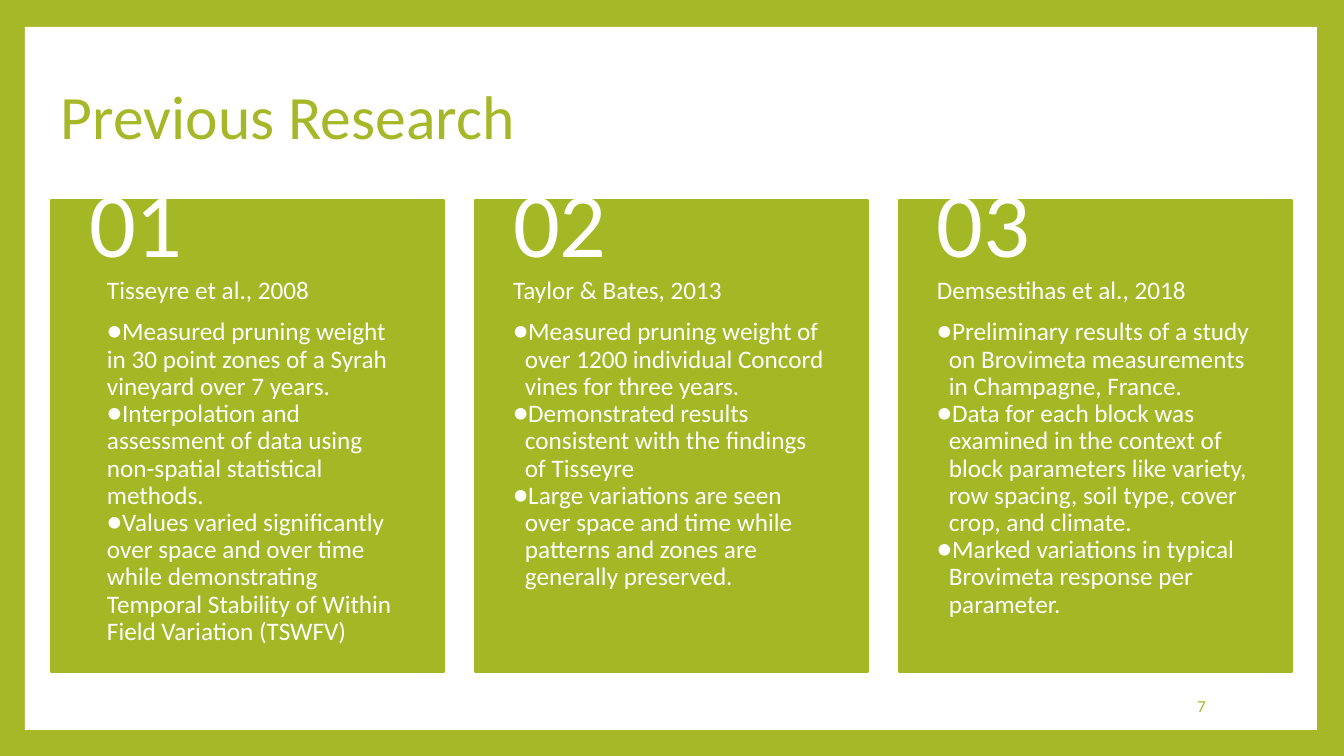
from dataclasses import dataclass

from lxml import etree
from pptx import Presentation
from pptx import util as u
from pptx.dml.color import RGBColor
from pptx.enum import shapes, text
from pptx.oxml import ns

PX = 9144000 / 1008


@dataclass(frozen=True)
class Theme:
    """Colours, font and type sizes of the slide."""
    accent: str = "A6B727"
    card: str = "A4B724"
    white: str = "FFFFFF"
    font: str = "Calibri"
    title: int = 44
    number: int = 66
    body: int = 18
    page: int = 12


THEME = Theme()
CARD_LEFT, CARD_TOP, CARD_WIDTH, CARD_HEIGHT, CARD_PITCH = 51, 200, 393, 472, 424
BODY_OFFSET, NUMBER_HEIGHT, CARD_INSET = 78, 55, 38
BULLET_INDENT = -19

STUDIES = [
    ("Tisseyre et al., 2008", 56, 0, [
        "Measured pruning weight in 30 point zones of a Syrah vineyard over 7 years.",
        "Interpolation and assessment of data using non-spatial statistical methods.",
        "Values varied significantly over space and over time while demonstrating "
        "Temporal Stability of Within Field Variation (TSWFV)",
    ]),
    ("Taylor & Bates, 2013", CARD_INSET, 12, [
        "Measured pruning weight of over 1200 individual Concord vines for three years.",
        "Demonstrated results consistent with the findings of Tisseyre",
        "Large variations are seen over space and time while patterns and zones "
        "are generally preserved.",
    ]),
    ("Demsestihas et al., 2018", CARD_INSET, 12, [
        "Preliminary results of a study on Brovimeta measurements in Champagne, France.",
        "Data for each block was examined in the context of block parameters like "
        "variety, row spacing, soil type, cover crop, and climate.",
        "Marked variations in typical Brovimeta response per parameter.",
    ]),
]


def px(length):
    """Turn pixels into EMU."""
    return u.Emu(round(length * PX))


def color(value):
    """Turn a hex string into a colour."""
    return RGBColor.from_string(value)


def add_panel(slide, box, fill, line_width=0):
    """Add a plain filled rectangle, outlined in its own colour if asked."""
    shape = slide.shapes.add_shape(shapes.MSO_SHAPE.RECTANGLE, *map(px, box))
    shape.shadow.inherit = False
    shape.fill.solid()
    shape.fill.fore_color.rgb = color(fill)
    if line_width:
        shape.line.color.rgb = color(fill)
        shape.line.width = u.Pt(line_width)
    else:
        shape.line.fill.background()


def add_text(slide, box, lines, *, size, fill=THEME.white, insets=(10, 5, 10, 5),
             anchor=text.MSO_ANCHOR.MIDDLE, align=text.PP_ALIGN.LEFT, spacing=0.9):
    """Add a text box with one paragraph per line and return its paragraphs."""
    frame = slide.shapes.add_textbox(*map(px, box)).text_frame
    frame.word_wrap = True
    frame.vertical_anchor = anchor
    (frame.margin_left, frame.margin_top,
     frame.margin_right, frame.margin_bottom) = map(px, insets)
    frame.text = "\n".join(lines)
    for paragraph in frame.paragraphs:
        paragraph.alignment = align
        paragraph.line_spacing = spacing
        for run in paragraph.runs:
            run.font.name = THEME.font
            run.font.size = u.Pt(size)
            run.font.color.rgb = color(fill)
    return frame.paragraphs


def add_bullet(paragraph, margin):
    """Give a paragraph a round white bullet with a hanging indent."""
    properties = paragraph._p.get_or_add_pPr()
    properties.set("marL", str(px(margin)))
    properties.set("indent", str(px(BULLET_INDENT)))
    bullet_color = etree.SubElement(properties, ns.qn("a:buClr"))
    etree.SubElement(bullet_color, ns.qn("a:srgbClr"), val=THEME.white)
    etree.SubElement(properties, ns.qn("a:buFont"), typeface=THEME.font)
    etree.SubElement(properties, ns.qn("a:buChar"), char="●")


def add_study(slide, index, study):
    """Add one numbered study card."""
    citation, inset, margin, findings = study
    left = CARD_LEFT + index * CARD_PITCH
    add_panel(slide, (left, CARD_TOP, CARD_WIDTH, CARD_HEIGHT), THEME.card, 1.5)
    body = (left, CARD_TOP + BODY_OFFSET, CARD_WIDTH, CARD_HEIGHT - BODY_OFFSET)
    paragraphs = add_text(slide, body, [citation, *findings], size=THEME.body,
                          insets=(inset, 0, CARD_INSET, 36),
                          anchor=text.MSO_ANCHOR.TOP)
    paragraphs[1].space_before = u.Pt(10)
    for paragraph in paragraphs[1:]:
        add_bullet(paragraph, margin)
    add_text(slide, (left, CARD_TOP, CARD_WIDTH, NUMBER_HEIGHT), [f"{index + 1:02}"],
             size=THEME.number, insets=(CARD_INSET, 18, CARD_INSET, 18))


def main():
    """Build the slide and save it."""
    presentation = Presentation()
    presentation.slide_width, presentation.slide_height = px(1344), px(756)
    slide = presentation.slides.add_slide(presentation.slide_layouts[6])
    slide.background.fill.solid()
    slide.background.fill.fore_color.rgb = color(THEME.accent)
    add_panel(slide, (25, 27, 1292, 703), THEME.white)
    add_text(slide, (51, 45, 1089, 149), ["Previous Research"],
             size=THEME.title, fill=THEME.accent)
    for index, study in enumerate(STUDIES):
        add_study(slide, index, study)
    add_text(slide, (1028, 686, 188, 40), ["7"], size=THEME.page, fill=THEME.accent,
             align=text.PP_ALIGN.RIGHT, spacing=1.0)
    presentation.save("out.pptx")


if __name__ == "__main__":
    main()
